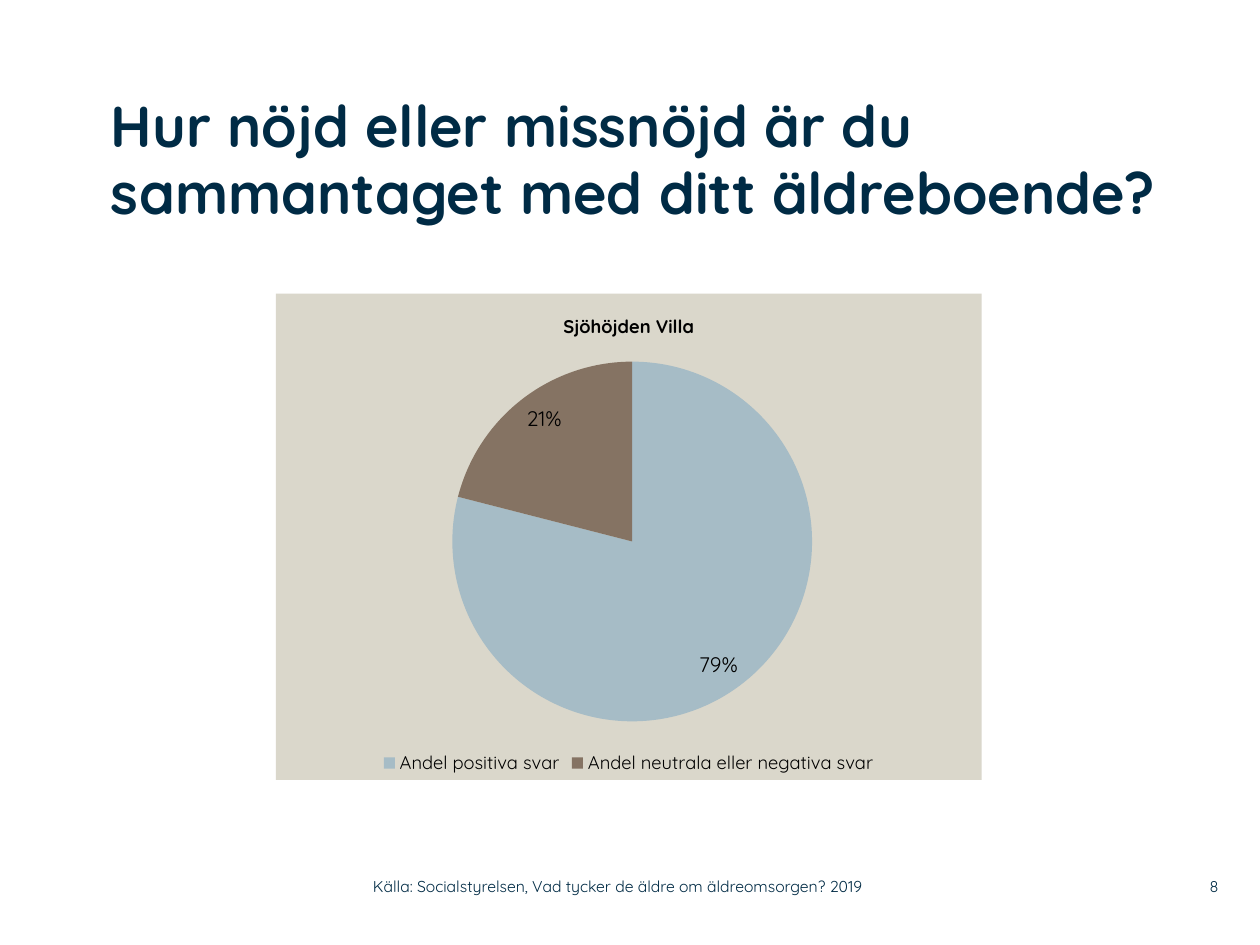
from lxml import etree
from pptx import Presentation
from pptx.chart.data import CategoryChartData
from pptx.dml.color import RGBColor
from pptx.enum.chart import XL_CHART_TYPE, XL_LABEL_POSITION, XL_LEGEND_POSITION
from pptx.enum.text import MSO_ANCHOR, PP_ALIGN
from pptx.oxml import parse_xml
from pptx.oxml.ns import nsdecls, qn
from pptx.util import Inches, Pt

PIE = XL_CHART_TYPE.PIE
INSIDE_END = XL_LABEL_POSITION.INSIDE_END
LEGEND_BOTTOM = XL_LEGEND_POSITION.BOTTOM
TOP, MIDDLE = MSO_ANCHOR.TOP, MSO_ANCHOR.MIDDLE
LEFT, RIGHT = PP_ALIGN.LEFT, PP_ALIGN.RIGHT


def color(value):
    return RGBColor.from_string(value)


class Slide:
    font_name = "Quicksand"
    navy = "002B45"
    black = "000000"
    sand = "DAD7CB"

    def __init__(self, deck):
        self.page = deck.slides.add_slide(deck.slide_layouts[5])

    def style_font(self, font, size, hex_color, bold=False):
        font.name = self.font_name
        font.size = Pt(size)
        font.bold = bold
        font.color.rgb = color(hex_color)

    def fill_text(self, box, text, size, align=LEFT, anchor=MIDDLE, bold=False):
        frame = box.text_frame
        frame.word_wrap = True
        frame.vertical_anchor = anchor
        frame.margin_left = frame.margin_right = 0
        frame.margin_top = frame.margin_bottom = 0
        para = frame.paragraphs[0]
        para.text = text
        para.alignment = align
        self.style_font(para.font, size, self.navy, bold)
        return para

    def title(self, text, left, top, width, height):
        box = self.page.shapes.title
        box.left, box.top = Inches(left), Inches(top)
        box.width, box.height = Inches(width), Inches(height)
        para = self.fill_text(box, text, 33, anchor=TOP, bold=True)
        para.line_spacing = 0.96

    def text(self, text, left, top, width, height, align=LEFT):
        box = self.page.shapes.add_textbox(
            Inches(left), Inches(top), Inches(width), Inches(height))
        self.fill_text(box, text, 9, align)

    def pie(self, heading, shares, left, top, width, height):
        data = CategoryChartData(number_format="0")
        data.categories = [name for name, _, _ in shares]
        data.add_series("Series 1", [value for _, value, _ in shares])
        chart = self.page.shapes.add_chart(
            PIE, Inches(left), Inches(top), Inches(width), Inches(height), data).chart
        self.style_font(chart.font, 18, self.black)

        chart.has_title = True
        para = chart.chart_title.text_frame.paragraphs[0]
        para.text = heading
        self.style_font(para.font, 10.5, self.black, True)
        chart.chart_title.include_in_layout = False

        chart.has_legend = True
        chart.legend.position = LEGEND_BOTTOM
        chart.legend.include_in_layout = False
        self.style_font(chart.legend.font, 10.5, self.black)

        plot = chart.plots[0]
        plot.vary_by_categories = True
        plot.has_data_labels = True
        labels = plot.data_labels
        labels.show_percentage = True
        labels.show_value = False
        labels.number_format = "0%"
        labels.number_format_is_linked = False
        labels.position = INSIDE_END
        self.style_font(labels.font, 12, self.black)
        for index, (_, _, shade) in enumerate(shares):
            fill = plot.series[0].points[index].format.fill
            fill.solid()
            fill.fore_color.rgb = color(shade)
        self.place_plot(chart, x=0.25, y=0.14, w=0.51, h=0.74)
        self.paint_background(chart)

    def place_plot(self, chart, **fractions):
        area = chart.element.find(".//" + qn("c:plotArea"))
        for old in area.findall(qn("c:layout")):
            area.remove(old)
        layout = etree.Element(qn("c:layout"))
        manual = etree.SubElement(layout, qn("c:manualLayout"))
        settings = {"layoutTarget": "inner", "xMode": "edge", "yMode": "edge", **fractions}
        for name, value in settings.items():
            etree.SubElement(manual, qn("c:" + name)).set("val", str(value))
        area.insert(0, layout)

    def paint_background(self, chart):
        chart.element.find(qn("c:chart")).addnext(parse_xml(
            f'<c:spPr {nsdecls("c", "a")}><a:solidFill><a:srgbClr val="{self.sand}"/>'
            '</a:solidFill><a:ln><a:noFill/></a:ln></c:spPr>'))


def main():
    deck = Presentation()
    deck.slide_width, deck.slide_height = Inches(10), Inches(7.5)
    slide = Slide(deck)
    slide.title("Hur nöjd eller missnöjd är du sammantaget med ditt äldreboende?",
                0.88, 0.75, 8.83, 1.42)
    slide.pie("Sjöhöjden Villa",
              [("Andel positiva svar", 79, "A6BCC6"),
               ("Andel neutrala eller negativa svar", 21, "857363")],
              2.19, 2.33, 5.6, 3.86)
    slide.text("Källa: Socialstyrelsen, Vad tycker de äldre om äldreomsorgen? 2019",
               2.96, 6.89, 4.43, 0.29)
    slide.text("8", 9.2, 6.89, 0.47, 0.29, RIGHT)
    deck.save("out.pptx")


if __name__ == "__main__":
    main()
